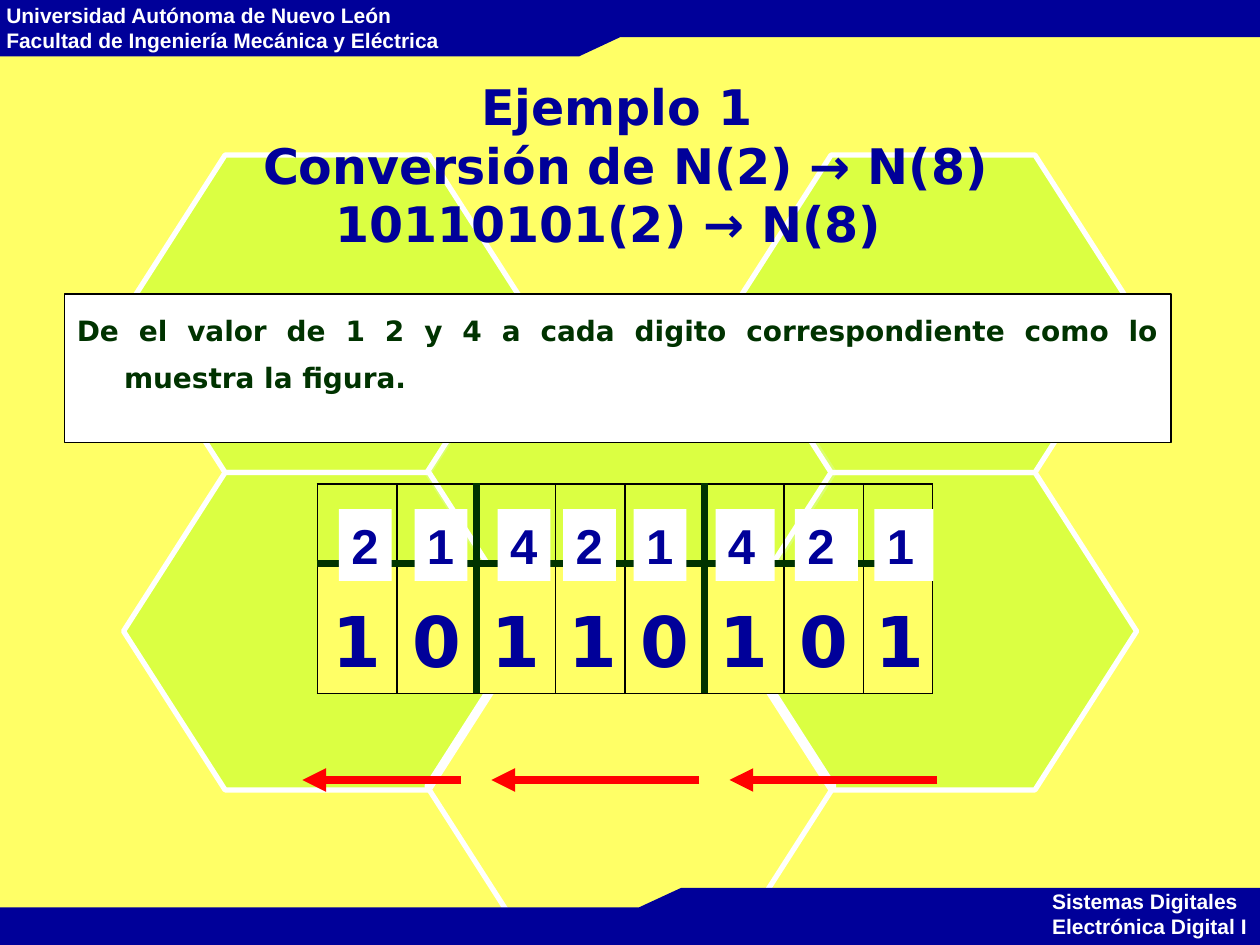
import pptx
import pptx.chart.data
import pptx.dml.color
import pptx.enum.shapes
import pptx.enum.text
import pptx.oxml
import pptx.oxml.ns
import pptx.oxml.xmlchemy
import pptx.util
from lxml import etree

Pt = pptx.util.Pt
RGB = pptx.dml.color.RGBColor
qn = pptx.oxml.ns.qn
SHAPE = pptx.enum.shapes.MSO_SHAPE
ALIGN = pptx.enum.text.PP_ALIGN
ANCHOR = pptx.enum.text.MSO_ANCHOR

NAVY = RGB(0x00, 0x00, 0x99)
YELLOW = RGB(0xFF, 0xFF, 0x66)
LIME = RGB(0xCC, 0xFF, 0x33)
WHITE = RGB(0xFF, 0xFF, 0xFF)
BLACK = RGB(0x00, 0x00, 0x00)
GREEN = RGB(0x00, 0x33, 0x00)
RED = RGB(0xFF, 0x00, 0x00)

WIDTH, HEIGHT = 720, 540
HEX_W, HEX_H = 232.6, 181.4
HEX_COLS = (70.6, 244, 416.9)
HEX_ROWS = (88.6, 179.3, 270, 358.6)
HEXAGONS = ((0, 0), (1, 1), (2, 2), (2, 0), (0, 2), (1, 3))
BITS = "10110101"
WEIGHTS = "21421421"
GROUP_ENDS = (1, 4)
COL_WIDTHS = (45.4, 45.4, 45.4, 39.6) * 2
WEIGHT_BOXES = ((12.3, 30.2), (55.5, 30.2), (103, 30.2), (140.4, 30.2),
                (180.7, 30.2), (227.5, 33.8), (272.9, 36), (318.3, 33.8))


def style_shape(s, fill=None, line=None, weight=1):
    """Set the fill and outline of a shape and drop its shadow."""
    s.shadow.inherit = False
    if fill is None:
        s.fill.background()
    else:
        s.fill.solid()
        s.fill.fore_color.rgb = fill
    if line is None:
        s.line.fill.background()
    else:
        s.line.color.rgb = line
        s.line.width = Pt(weight)


def add_box(slide, kind, x, y, w, h, **style):
    """Add a styled preset shape."""
    s = slide.shapes.add_shape(kind, Pt(x), Pt(y), Pt(w), Pt(h))
    style_shape(s, **style)
    return s


def add_run(p, text, size, color, font):
    """Add a bold run to a paragraph."""
    r = p.add_run()
    r.text = text
    r.font.size = Pt(size)
    r.font.bold = True
    r.font.name = font
    r.font.color.rgb = color


def add_banner(slide, points, lines, x, y, w):
    """Draw a stepped band and its lines of text."""
    builder = slide.shapes.build_freeform(Pt(points[0][0]), Pt(points[0][1]))
    builder.add_line_segments([(Pt(a), Pt(b)) for a, b in points[1:]], close=True)
    style_shape(builder.convert_to_shape(), NAVY)
    tf = slide.shapes.add_textbox(Pt(x), Pt(y), Pt(w), Pt(28.8)).text_frame
    tf.word_wrap = True
    tf.margin_left = tf.margin_right = tf.margin_top = tf.margin_bottom = 0
    for i, text in enumerate(lines):
        p = tf.add_paragraph() if i else tf.paragraphs[0]
        add_run(p, text, 12, WHITE, "Arial")


def add_background(slide):
    """Draw the yellow ground with its honeycomb."""
    add_box(slide, SHAPE.RECTANGLE, 0, 0, WIDTH, HEIGHT, fill=YELLOW)
    for col, row in HEXAGONS:
        fill = LIME if row < 3 else None
        s = add_box(slide, SHAPE.HEXAGON, HEX_COLS[col], HEX_ROWS[row],
                    HEX_W, HEX_H, fill=fill, line=WHITE, weight=3)
        s.adjustments[0] = 0.32
        if fill is not None:
            color = s.fill._xPr.find(qn("a:solidFill"))[0]
            etree.SubElement(color, qn("a:alpha"), val="70000")


def add_title(slide, x, y, w, h):
    """Write the three centred title lines."""
    tf = slide.shapes.add_textbox(Pt(x), Pt(y), Pt(w), Pt(h)).text_frame
    tf.word_wrap = True
    tf.vertical_anchor = ANCHOR.MIDDLE
    p = tf.paragraphs[0]
    p.alignment = ALIGN.CENTER
    lines = ("Ejemplo 1 ", "Conversión de N(2) → N(8)", "10110101(2) → N(8)  ")
    for i, text in enumerate(lines):
        if i:
            p.add_line_break()
        add_run(p, text, 28, NAVY, "DejaVu Sans")


def add_instruction(slide, x, y, w, h):
    """Draw the white box with the justified instruction."""
    s = add_box(slide, SHAPE.RECTANGLE, x, y, w, h, fill=WHITE, line=BLACK)
    tf = s.text_frame
    tf.word_wrap = True
    tf.vertical_anchor = ANCHOR.TOP
    p = tf.paragraphs[0]
    p.alignment = ALIGN.JUSTIFY
    p.line_spacing = 1.4
    pPr = p._p.get_or_add_pPr()
    pPr.set("marL", str(Pt(27)))
    pPr.set("indent", str(-Pt(27)))
    add_run(p, "De el valor de 1 2 y 4 a cada digito correspondiente "
               "como lo muestra la figura.", 16, GREEN, "DejaVu Sans")


def set_borders(cell, thick_sides):
    """Give a cell thin black borders, or thick green ones on some sides."""
    tcPr = cell._tc.get_or_add_tcPr()
    for i, side in enumerate("LRTB"):
        thick = side in thick_sides
        ln = etree.Element(qn("a:ln" + side), w=str(Pt(4.5 if thick else 1)))
        fill = etree.SubElement(ln, qn("a:solidFill"))
        etree.SubElement(fill, qn("a:srgbClr"), val=str(GREEN if thick else BLACK))
        tcPr.insert(i, ln)


def add_bit_table(slide, x, y):
    """Build the table of bits and lay the digit weights over its top row."""
    heights = (45.4, 74.2)
    frame = slide.shapes.add_table(2, len(BITS), Pt(x), Pt(y),
                                   Pt(sum(COL_WIDTHS)), Pt(sum(heights)))
    table = frame.table
    table.first_row = table.horz_banding = False
    for row, height in zip(table.rows, heights):
        row.height = Pt(height)
    for c, (bit, width) in enumerate(zip(BITS, COL_WIDTHS)):
        table.columns[c].width = Pt(width)
        sides = "R" * (c in GROUP_ENDS) + "L" * (c - 1 in GROUP_ENDS)
        top, bottom = table.cell(0, c), table.cell(1, c)
        top.fill.background()
        bottom.fill.solid()
        bottom.fill.fore_color.rgb = YELLOW
        set_borders(top, sides + "B")
        set_borders(bottom, sides + "T")
        p = bottom.text_frame.paragraphs[0]
        p.alignment = ALIGN.CENTER
        p.line_spacing = 1.4
        add_run(p, bit, 40, NAVY, "DejaVu Sans")
    for weight, (dx, w) in zip(WEIGHTS, WEIGHT_BOXES):
        s = add_box(slide, SHAPE.RECTANGLE, x + dx, y + 14.4, w, 41, fill=WHITE)
        s.text_frame.vertical_anchor = ANCHOR.TOP
        p = s.text_frame.paragraphs[0]
        p.alignment = ALIGN.LEFT
        add_run(p, weight, 28, NAVY, "Arial")


def add_arrows(slide, y, spans):
    """Draw red arrows that point left."""
    for start, end in spans:
        s = slide.shapes.add_connector(pptx.enum.shapes.MSO_CONNECTOR.STRAIGHT,
                                       Pt(start), Pt(y), Pt(end), Pt(y))
        s.line.color.rgb = RED
        s.line.width = Pt(4.5)
        etree.SubElement(s.line._get_or_add_ln(), qn("a:tailEnd"), type="triangle")
        etree.SubElement(s._element.spPr, qn("a:effectLst"))


def main():
    """Build and save the slide."""
    prs = pptx.Presentation()
    prs.slide_width, prs.slide_height = Pt(WIDTH), Pt(HEIGHT)
    slide = prs.slides.add_slide(prs.slide_layouts[6])
    add_background(slide)
    add_banner(slide, ((0, 0), (720, 0), (720, 21.2), (354.6, 21.2), (331, 32.2), (0, 32.2)),
               ("Universidad Autónoma de Nuevo León",
                "Facultad de Ingeniería Mecánica y Eléctrica"), 3.6, 1.4, 300)
    add_banner(slide, ((720, 540), (0, 540), (0, 518.6), (365, 518.6), (389.2, 507.4), (720, 507.4)),
               ("Sistemas Digitales", "Electrónica Digital I"), 601.2, 507.6, 118.8)
    add_title(slide, 105, 71.3, 504.8, 45.4)
    add_instruction(slide, 36.8, 167.8, 632.2, 85)
    add_bit_table(slide, 181.4, 276.6)
    add_arrows(slide, 445.7, ((535.7, 416.9), (399.6, 280.8), (263.6, 172.8)))
    prs.save("out.pptx")


if __name__ == "__main__":
    main()
